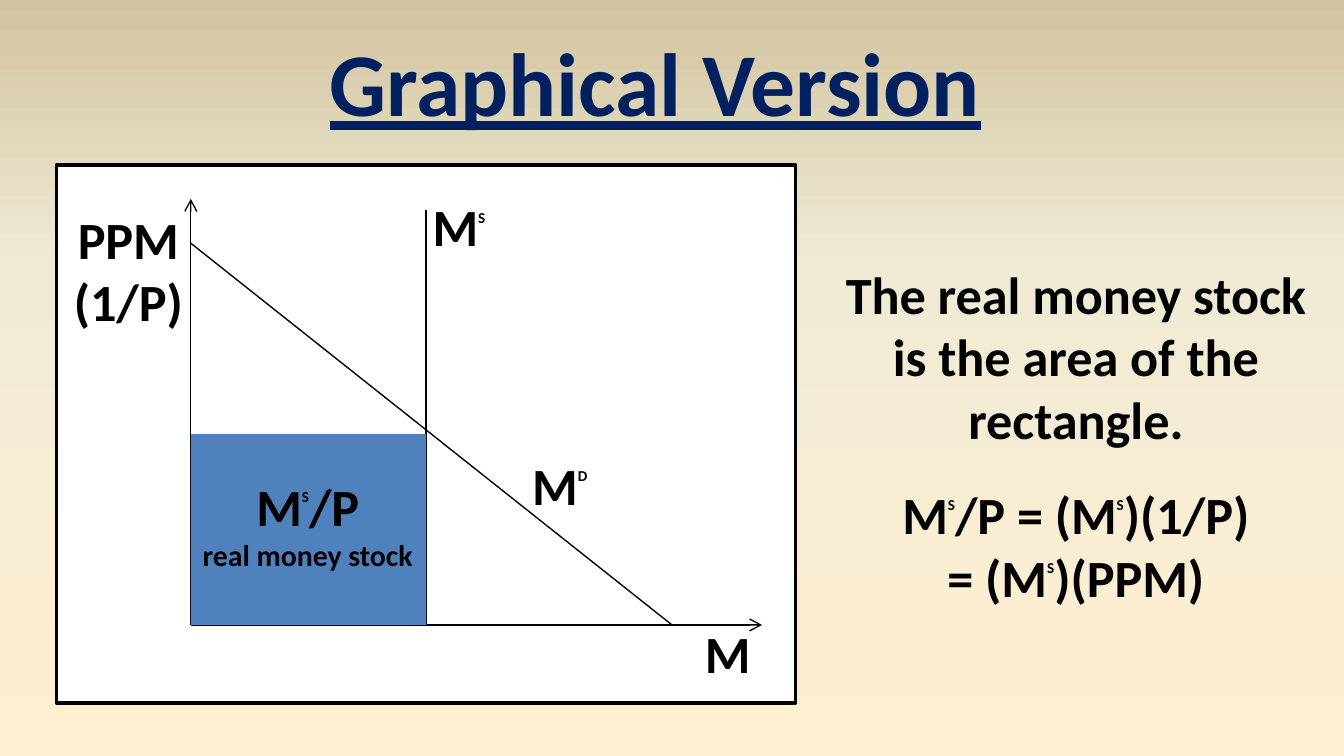
"""Build a slide that shows the real money stock as an area under money demand."""
from copy import deepcopy
from dataclasses import dataclass

from pptx import Presentation
from pptx.dml.color import RGBColor
from pptx.enum.shapes import MSO_CONNECTOR as Connector, MSO_SHAPE as Shape
from pptx.enum.text import MSO_ANCHOR as Anchor, MSO_AUTO_SIZE as AutoSize, PP_ALIGN as Align
from pptx.oxml.ns import qn
from pptx.oxml.xmlchemy import OxmlElement
from pptx.slide import Slide
from pptx.util import Inches, Pt

BLACK = RGBColor(0x00, 0x00, 0x00)
WHITE = RGBColor(0xFF, 0xFF, 0xFF)
NAVY = RGBColor(0x00, 0x20, 0x60)
BLUE = RGBColor(0x4F, 0x81, 0xBD)
CREAM = RGBColor(0xFF, 0xEF, 0xD1)
IVORY = RGBColor(0xF0, 0xEB, 0xD5)
SAND = RGBColor(0xD1, 0xC3, 0x9F)

FONT = "Calibri"
RAISED_SIZE = 14
ORIGIN_X, ORIGIN_Y = 1.42, 4.65
SUPPLY_X, PRICE_Y = 3.17, 3.23


@dataclass(frozen=True)
class Row:
    """A paragraph in which ^ raises the one character after it."""
    text: str
    size: float = 28
    gap: float = 0


@dataclass(frozen=True)
class Label:
    """A centred block of text and its place in inches."""
    left: float
    top: float
    width: float
    height: float
    rows: tuple[Row, ...]


@dataclass(frozen=True)
class Segment:
    """A straight line of the graph, with an arrowhead if it is an axis."""
    start: tuple[float, float]
    end: tuple[float, float]
    arrow: bool = False


@dataclass(frozen=True)
class Panel:
    """A filled rectangle, outlined when it has a line width."""
    left: float
    top: float
    width: float
    height: float
    fill: RGBColor
    line_width: float = 0


GRAPH_FRAME = Panel(0.42, 1.23, 5.5, 4, WHITE, 2)
MONEY_STOCK = Panel(ORIGIN_X, PRICE_Y, SUPPLY_X - ORIGIN_X, ORIGIN_Y - PRICE_Y, BLUE)

SEGMENTS = (
    Segment((SUPPLY_X, 1.56), (SUPPLY_X, ORIGIN_Y)),
    Segment((ORIGIN_X, 1.81), (5, ORIGIN_Y)),
    Segment((ORIGIN_X, ORIGIN_Y), (ORIGIN_X, 1.48), arrow=True),
    Segment((ORIGIN_X, ORIGIN_Y), (5.67, ORIGIN_Y), arrow=True),
)

EXPLANATION = Label(6.17, 1.9, 3.67, 2.69, (
    Row("The real money stock is the area of the rectangle."),
    Row("M^S/P = (M^S)(1/P)", gap=17),
    Row("= (M^S)(PPM)"),
))

GRAPH_LABELS = (
    Label(3.83, 3.32, 0.67, 0.57, (Row("M^D"),)),
    Label(3.08, 1.4, 0.67, 0.57, (Row("M^S"),)),
    Label(0.33, 1.49, 1.25, 1.04, (Row("PPM"), Row("(1/P)"))),
    Label(5.08, 4.57, 0.67, 0.57, (Row("M"),)),
)

AREA_LABEL = Label(1.33, 3.48, 1.92, 0.84, (Row("M^S/P"), Row("real money stock", 16)))


def paint_background(slide: Slide) -> None:
    """Fill the background with a gradient that runs upwards."""
    fill = slide.background.fill
    fill.gradient()
    fill.gradient_angle = 90
    stop_list = slide.element.find(f".//{qn('a:gsLst')}")
    stop_list.append(deepcopy(stop_list[0]))
    colours = ((0, CREAM), (0.65, IVORY), (1, SAND))
    for stop, (position, colour) in zip(fill.gradient_stops, colours):
        stop.position = position
        stop.color.rgb = colour


def set_title(slide: Slide, text: str) -> None:
    """Place and format the title."""
    title = slide.shapes.title
    title.left, title.top = Inches(2.33), Inches(0.15)
    title.width, title.height = Inches(5.09), Inches(0.91)
    frame = title.text_frame
    frame.text = text
    frame.word_wrap = False
    frame.auto_size = AutoSize.NONE
    frame.vertical_anchor = Anchor.TOP
    para = frame.paragraphs[0]
    para.alignment = Align.CENTER
    font = para.runs[0].font
    font.name, font.size = FONT, Pt(48)
    font.bold = font.underline = True
    font.color.rgb = NAVY


def add_panel(slide: Slide, panel: Panel) -> None:
    """Draw a filled rectangle."""
    shape = slide.shapes.add_shape(
        Shape.RECTANGLE, Inches(panel.left), Inches(panel.top),
        Inches(panel.width), Inches(panel.height))
    shape.shadow.inherit = False
    shape.fill.solid()
    shape.fill.fore_color.rgb = panel.fill
    if panel.line_width:
        shape.line.color.rgb = BLACK
        shape.line.width = Pt(panel.line_width)
    else:
        shape.line.fill.background()


def add_segment(slide: Slide, segment: Segment) -> None:
    """Draw a line of the graph."""
    connector = slide.shapes.add_connector(
        Connector.STRAIGHT, *map(Inches, segment.start + segment.end))
    connector.line.color.rgb = BLACK
    connector.line.width = Pt(0.75)
    properties = connector.element.spPr
    if segment.arrow:
        head = OxmlElement("a:tailEnd")
        head.set("type", "arrow")
        properties.find(qn("a:ln")).append(head)
    properties.append(OxmlElement("a:effectLst"))


def add_span(para, text: str, size: float, raised: bool = False) -> None:
    """Add a bold run, raised if asked."""
    if not text:
        return
    span = para.add_run()
    span.text = text
    font = span.font
    font.name, font.size, font.bold = FONT, Pt(size), True
    font.color.rgb = BLACK
    if raised:
        span._r.get_or_add_rPr().set("baseline", "90000")


def add_label(slide: Slide, label: Label) -> None:
    """Write a text block row by row."""
    box = slide.shapes.add_textbox(
        Inches(label.left), Inches(label.top), Inches(label.width), Inches(label.height))
    frame = box.text_frame
    frame.word_wrap = True
    for index, row in enumerate(label.rows):
        para = frame.add_paragraph() if index else frame.paragraphs[0]
        para.alignment = Align.CENTER
        para.space_before = Pt(row.gap)
        first, *others = row.text.split("^")
        add_span(para, first, row.size)
        for piece in others:
            add_span(para, piece[0], RAISED_SIZE, raised=True)
            add_span(para, piece[1:], row.size)


def main() -> None:
    """Assemble and save the deck."""
    deck = Presentation()
    deck.slide_width = Inches(10)
    deck.slide_height = deck.slide_width * 9 // 16
    page = deck.slides.add_slide(deck.slide_layouts.get_by_name("Title Only"))
    paint_background(page)
    set_title(page, "Graphical Version")
    add_label(page, EXPLANATION)
    add_panel(page, GRAPH_FRAME)
    for segment in SEGMENTS:
        add_segment(page, segment)
    for label in GRAPH_LABELS:
        add_label(page, label)
    add_panel(page, MONEY_STOCK)
    add_label(page, AREA_LABEL)
    deck.save("out.pptx")


if __name__ == "__main__":
    main()
